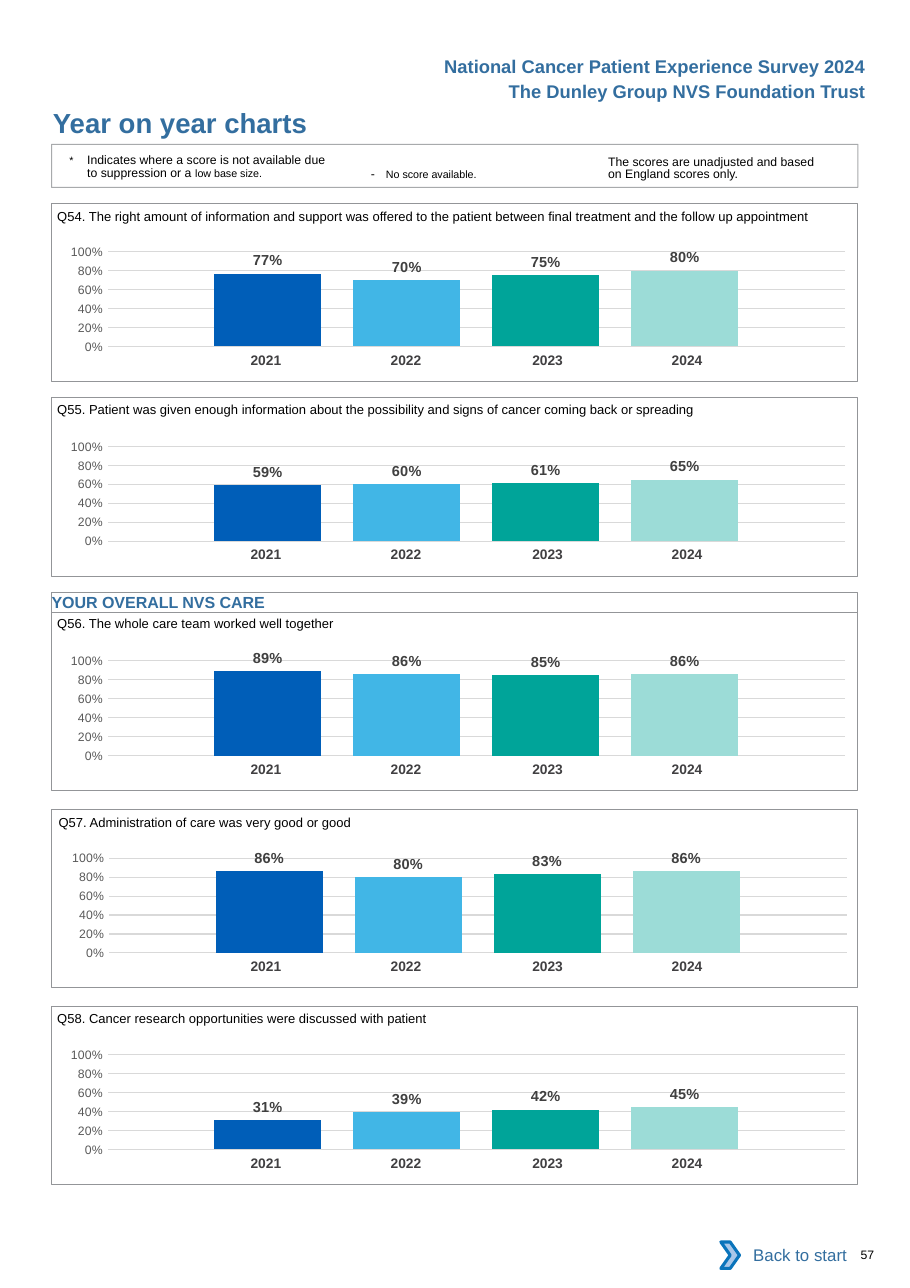
from dataclasses import dataclass

from lxml import etree
from pptx import Presentation
from pptx.chart.data import CategoryChartData
from pptx.dml.color import RGBColor
from pptx.enum.chart import XL_CHART_TYPE, XL_LABEL_POSITION, XL_TICK_MARK
from pptx.enum.shapes import MSO_SHAPE
from pptx.enum.text import MSO_ANCHOR, PP_ALIGN
from pptx.oxml import parse_xml
from pptx.oxml.ns import nsdecls, qn
from pptx.util import Cm, Pt


@dataclass(frozen=True)
class Theme:
    font: str = "Arial"
    chart_font: str = "Calibri"
    black: str = "000000"
    blue: str = "336E9F"
    border: str = "939598"
    grid: str = "D9D9D9"
    axis: str = "595959"
    label: str = "404040"
    year: str = "414042"
    white: str = "FFFFFF"
    arrow: str = "A8C7E9"
    arrow_line: str = "0A74BB"
    bars: tuple = ("005EB8", "41B6E6", "00A499", "9CDCD7")
    title_size: float = 18
    header_size: float = 12
    link_size: float = 11
    heading_size: float = 10.5
    chart_size: float = 10
    label_size: float = 9.5
    year_size: float = 9
    question_size: float = 8.5
    small_size: float = 8
    note_size: float = 7


@dataclass(frozen=True)
class Box:
    left: float
    top: float
    width: float
    height: float

    def inside(self, left, top, width, height):
        return Box(self.left + left, self.top + top, width, height)

    def lengths(self):
        return Cm(self.left), Cm(self.top), Cm(self.width), Cm(self.height)


THEME = Theme()
YEARS = ("2021", "2022", "2023", "2024")
YEAR_WIDTHS = (3.23, 3.23, 3.4, 3.23)
YEAR_RIGHT_MARGINS = (0, 0, 0.1, 0.3)
PANEL_LEFT, PANEL_WIDTH, PANEL_HEIGHT = 1.19, 18.59, 4.11
PANELS = (
    (4.68, 0.02, 0.02, "Q54. The right amount of information and support was offered to the patient "
     "between final treatment and the follow up appointment", (0.77, 0.70, 0.75, 0.80)),
    (9.17, 0.02, -0.02, "Q55. Patient was given enough information about the possibility and signs of "
     "cancer coming back or spreading", (0.59, 0.60, 0.61, 0.65)),
    (14.11, 0.02, -0.03, "Q56. The whole care team worked well together", (0.89, 0.86, 0.85, 0.86)),
    (18.66, 0.05, 0.02, "Q57. Administration of care was very good or good", (0.86, 0.80, 0.83, 0.86)),
    (23.19, 0.02, 0, "Q58. Cancer research opportunities were discussed with patient",
     (0.31, 0.39, 0.42, 0.45)),
)


def style_font(font, size, color, bold=False, name=THEME.font):
    font.name, font.size, font.bold = name, Pt(size), bold
    font.color.rgb = RGBColor.from_string(color)


def write_text(shape, runs, size, color, bold=False, align=PP_ALIGN.LEFT, anchor=MSO_ANCHOR.MIDDLE):
    frame = shape.text_frame
    frame.word_wrap = True
    frame.vertical_anchor = anchor
    frame.margin_left = frame.margin_right = frame.margin_top = frame.margin_bottom = 0
    paragraph = frame.paragraphs[0]
    paragraph.alignment = align
    style_font(paragraph.font, size, color, bold)
    for text, run_size in runs:
        run = paragraph.add_run()
        run.text = text
        if run_size != size:
            run.font.size = Pt(run_size)
    return paragraph


def add_text(slide, box, text, size, color, **options):
    text_box = slide.shapes.add_textbox(*box.lengths())
    return write_text(text_box, [(text, size)], size, color, **options)


def add_outlined(slide, box, kind=MSO_SHAPE.RECTANGLE, fill=None, line=THEME.border, width=0.5):
    shape = slide.shapes.add_shape(kind, *box.lengths())
    shape.shadow.inherit = False
    if fill:
        shape.fill.solid()
        shape.fill.fore_color.rgb = RGBColor.from_string(fill)
    else:
        shape.fill.background()
    if line:
        shape.line.color.rgb = RGBColor.from_string(line)
        shape.line.width = Pt(width)
    else:
        shape.line.fill.background()
    return shape


def add_header(slide, box):
    lines = ("National Cancer Patient Experience Survey 2024", "The Dunley Group NVS Foundation Trust")
    for index, text in enumerate(lines):
        add_text(slide, box.inside(0, 0.57 * index, box.width, 0.76), text, THEME.header_size,
                 THEME.blue, bold=True, align=PP_ALIGN.RIGHT)
    title = slide.shapes.title
    title.left, title.top, title.width, title.height = box.inside(-8.78, 1.3, 11.43, 0.76).lengths()
    write_text(title, [("Year on year charts", THEME.title_size)], THEME.title_size, THEME.blue, bold=True)


def add_legend(slide, box):
    frame = add_outlined(slide, box, width=0.75)
    color = frame.line._ln.find(".//" + qn("a:srgbClr"))
    etree.SubElement(color, qn("a:alpha")).set("val", "80000")
    small, note = THEME.small_size, THEME.note_size
    notes = (
        (0.41, 0.24, 6.1, 0.41, [("*\t", note), ("Indicates where a score is not available due to "
                                                "suppression or a ", small), ("low base size.", note)]),
        (7.36, 0.55, 4.4, 0.35, [("-\t", small), ("No score available.", note)]),
        (12.83, 0.27, 4.95, 0, [("The scores are unadjusted and based on England scores only.", small)]),
    )
    for left, top, width, indent, runs in notes:
        text_box = slide.shapes.add_textbox(*box.inside(left, top, width, 0.6).lengths())
        paragraph = write_text(text_box, runs, small, THEME.black, anchor=MSO_ANCHOR.TOP)
        paragraph.line_spacing = Pt(8.1)
        properties = paragraph._p.get_or_add_pPr()
        properties.set("marL", str(Cm(indent)))
        properties.set("indent", str(-Cm(indent)))


def add_year_chart(slide, box, scores):
    data = CategoryChartData(number_format="0%")
    data.categories = ["1"]
    for index, score in enumerate(scores, 1):
        data.add_series(f"Series {index}", [score])
    chart = slide.shapes.add_chart(XL_CHART_TYPE.COLUMN_CLUSTERED, *box.lengths(), data).chart
    chart.has_legend = chart.has_title = False
    style_font(chart.font, THEME.chart_size, THEME.black, name=THEME.chart_font)
    chart.category_axis.visible = False
    axis = chart.value_axis
    axis.minimum_scale, axis.maximum_scale, axis.major_unit = 0, 1, 0.2
    axis.major_tick_mark = axis.minor_tick_mark = XL_TICK_MARK.NONE
    axis.format.line.fill.background()
    axis.major_gridlines.format.line.color.rgb = RGBColor.from_string(THEME.grid)
    axis.major_gridlines.format.line.width = Pt(0.75)
    axis.tick_labels.number_format, axis.tick_labels.number_format_is_linked = "0%", False
    style_font(axis.tick_labels.font, THEME.small_size, THEME.axis)
    plot = chart.plots[0]
    plot.gap_width, plot.overlap, plot.vary_by_categories = 200, -30, False
    for series, color in zip(plot.series, THEME.bars):
        series.format.fill.solid()
        series.format.fill.fore_color.rgb = RGBColor.from_string(color)
        labels = series.data_labels
        labels.show_value, labels.position = True, XL_LABEL_POSITION.OUTSIDE_END
        labels.number_format, labels.number_format_is_linked = "0%", False
        style_font(labels.font, THEME.label_size, THEME.label, bold=True)
    area = chart._chartSpace.find(".//" + qn("c:plotArea"))
    for layout in area.findall(qn("c:layout")):
        area.remove(layout)
    settings = (("layoutTarget", "inner"), ("xMode", "edge"), ("yMode", "edge"),
                ("x", 0.079), ("y", 0.145), ("w", 0.915), ("h", 0.666))
    parts = "".join(f'<c:{tag} val="{value}"/>' for tag, value in settings)
    area.insert(0, parse_xml(f"<c:layout {nsdecls('c')}><c:manualLayout>{parts}</c:manualLayout></c:layout>"))


def add_year_table(slide, box):
    table = slide.shapes.add_table(1, len(YEARS), *box.lengths()).table
    table.first_row = table.horz_banding = False
    table._tbl.tblPr.find(qn("a:tableStyleId")).text = "{2D5ABB26-0587-4C30-8999-92F81FD0307C}"
    for index, year in enumerate(YEARS):
        table.columns[index].width = Cm(YEAR_WIDTHS[index])
        cell = table.cell(0, index)
        cell.fill.background()
        cell.margin_left, cell.margin_right = Cm(0.25), Cm(YEAR_RIGHT_MARGINS[index])
        cell.margin_top = cell.margin_bottom = Cm(0.13)
        cell.text = year
        paragraph = cell.text_frame.paragraphs[0]
        paragraph.alignment = PP_ALIGN.CENTER
        style_font(paragraph.font, THEME.year_size, THEME.year, bold=True)


def add_panel(slide, box, shift, question_shift, question, scores):
    add_outlined(slide, box)
    add_text(slide, box.inside(0.11 + shift, question_shift, box.width - 0.2, 0.56), question,
             THEME.question_size, THEME.black)
    add_year_chart(slide, box.inside(shift - 0.2, 0.65, box.width, 3.28), scores)
    add_year_table(slide, box.inside(3.2, 3.32, sum(YEAR_WIDTHS), 0.69))


def add_section_heading(slide, box):
    heading = add_outlined(slide, box)
    write_text(heading, [("YOUR OVERALL NVS CARE", THEME.heading_size)], THEME.heading_size,
               THEME.blue, bold=True)


def add_footer(slide, box):
    link = add_outlined(slide, box.inside(0.18, 0, 2.73, box.height), fill=THEME.white, line=None)
    write_text(link, [("Back to start", THEME.link_size)], THEME.link_size, THEME.blue, align=PP_ALIGN.RIGHT)
    add_outlined(slide, box.inside(0, 0.23, 0.43, 0.61), MSO_SHAPE.CHEVRON, THEME.arrow, THEME.arrow_line, 2)
    add_text(slide, box.inside(3.22, 0.36, 0.9, 0.33), "57", THEME.small_size, THEME.black)


def main():
    presentation = Presentation()
    presentation.slide_width, presentation.slide_height = Cm(20.98), Cm(29.69)
    slide = presentation.slides.add_slide(presentation.slide_layouts[5])
    add_header(slide, Box(10, 1.15, 9.96, 1.3))
    add_legend(slide, Box(PANEL_LEFT, 3.33, PANEL_WIDTH, 0.99))
    for top, *content in PANELS:
        add_panel(slide, Box(PANEL_LEFT, top, PANEL_WIDTH, PANEL_HEIGHT), *content)
    add_section_heading(slide, Box(PANEL_LEFT, 13.66, PANEL_WIDTH, 0.45))
    add_footer(slide, Box(16.62, 28.4, 4.2, 1.07))
    presentation.save("out.pptx")


if __name__ == "__main__":
    main()
